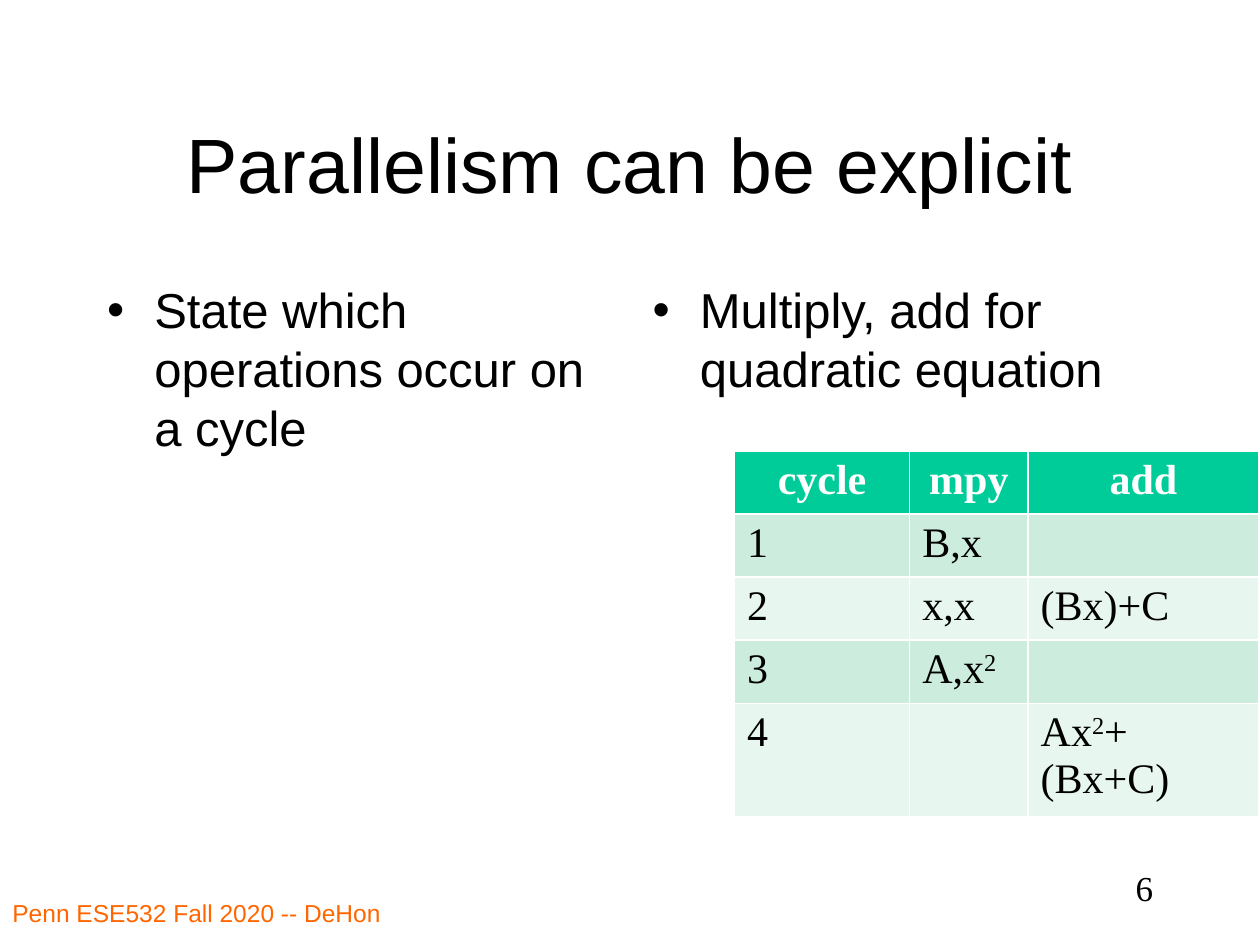
from pptx import Presentation
from pptx.dml.color import RGBColor
from pptx.enum.text import MSO_ANCHOR, MSO_AUTO_SIZE, PP_ALIGN
from pptx.util import Inches, Pt

LEFT, CENTER, RIGHT = PP_ALIGN.LEFT, PP_ALIGN.CENTER, PP_ALIGN.RIGHT
MIDDLE = MSO_ANCHOR.MIDDLE
NO_FIT = MSO_AUTO_SIZE.NONE

BLACK = RGBColor(0x00, 0x00, 0x00)
WHITE = RGBColor(0xFF, 0xFF, 0xFF)
ORANGE = RGBColor(0xFF, 0x66, 0x00)
GREEN = RGBColor(0x00, 0xCC, 0x99)
BANDS = [RGBColor(0xE7, 0xF6, 0xEF), RGBColor(0xCC, 0xEC, 0xDE)]
SANS, SERIF = "Arial", "Times New Roman"


def style(para, size, color, name, align=LEFT):
    para.alignment = align
    para.font.size = Pt(size)
    para.font.color.rgb = color
    para.font.name = name


def place(shape, left, top, width, height):
    shape.left, shape.top = Inches(left), Inches(top)
    shape.width, shape.height = Inches(width), Inches(height)


prs = Presentation()
prs.slide_width, prs.slide_height = Inches(10), Inches(7.5)
slide = prs.slides.add_slide(prs.slide_layouts[3])

# Title
title = slide.shapes.title
place(title, 0.75, 0.67, 8.5, 1.25)
title.text_frame.text = "Parallelism can be explicit"
title.text_frame.auto_size = NO_FIT
title.text_frame.vertical_anchor = MIDDLE
style(title.text_frame.paragraphs[0], 44, BLACK, SANS, CENTER)

# Two bulleted columns
points = [
    (1, 0.75, "State which operations occur on a cycle"),
    (2, 5.08, "Multiply, add for quadratic equation"),
]
for idx, left, text in points:
    body = slide.placeholders[idx]
    place(body, left, 2.17, 4.17, 4.5)
    body.text_frame.text = text
    body.text_frame.auto_size = NO_FIT
    style(body.text_frame.paragraphs[0], 28, BLACK, SANS)

# Footer and slide number
notes = [
    ((0, 7.08, 4.58, 0.42), "Penn ESE532 Fall 2020 -- DeHon", 14, ORANGE, SANS, LEFT),
    ((7.17, 6.83, 2.08, 0.5), "6", 20, BLACK, SERIF, RIGHT),
]
for area, text, size, color, name, align in notes:
    box = slide.shapes.add_textbox(*map(Inches, area))
    box.text_frame.word_wrap = True
    box.text_frame.text = text
    style(box.text_frame.paragraphs[0], size, color, name, align)

# Schedule table: "^" marks the start and end of a superscript
rows = [
    ["cycle", "mpy", "add"],
    ["1", "B,x", ""],
    ["2", "x,x", "(Bx)+C"],
    ["3", "A,x^2", ""],
    ["4", "", "Ax^2^+(Bx+C)"],
]
widths = [1.39, 0.94, 1.83]
frame = slide.shapes.add_table(
    len(rows), len(widths), Inches(5.83), Inches(3.58), Inches(4.17), Inches(2.03))
table = frame.table
for col, width in zip(table.columns, widths):
    col.width = Inches(width)

for r, row in enumerate(rows):
    head = r == 0
    for c, text in enumerate(row):
        cell = table.cell(r, c)
        cell.fill.solid()
        cell.fill.fore_color.rgb = GREEN if head else BANDS[r % 2]
        para = cell.text_frame.paragraphs[0]
        style(para, 24, WHITE if head else BLACK, SERIF, CENTER if head else LEFT)
        para.font.bold = head
        if not text:
            continue
        for i, part in enumerate(text.split("^")):
            run = para.add_run()
            run.text = part
            if i % 2:
                run.font._element.set("baseline", "30000")

prs.save("out.pptx")
